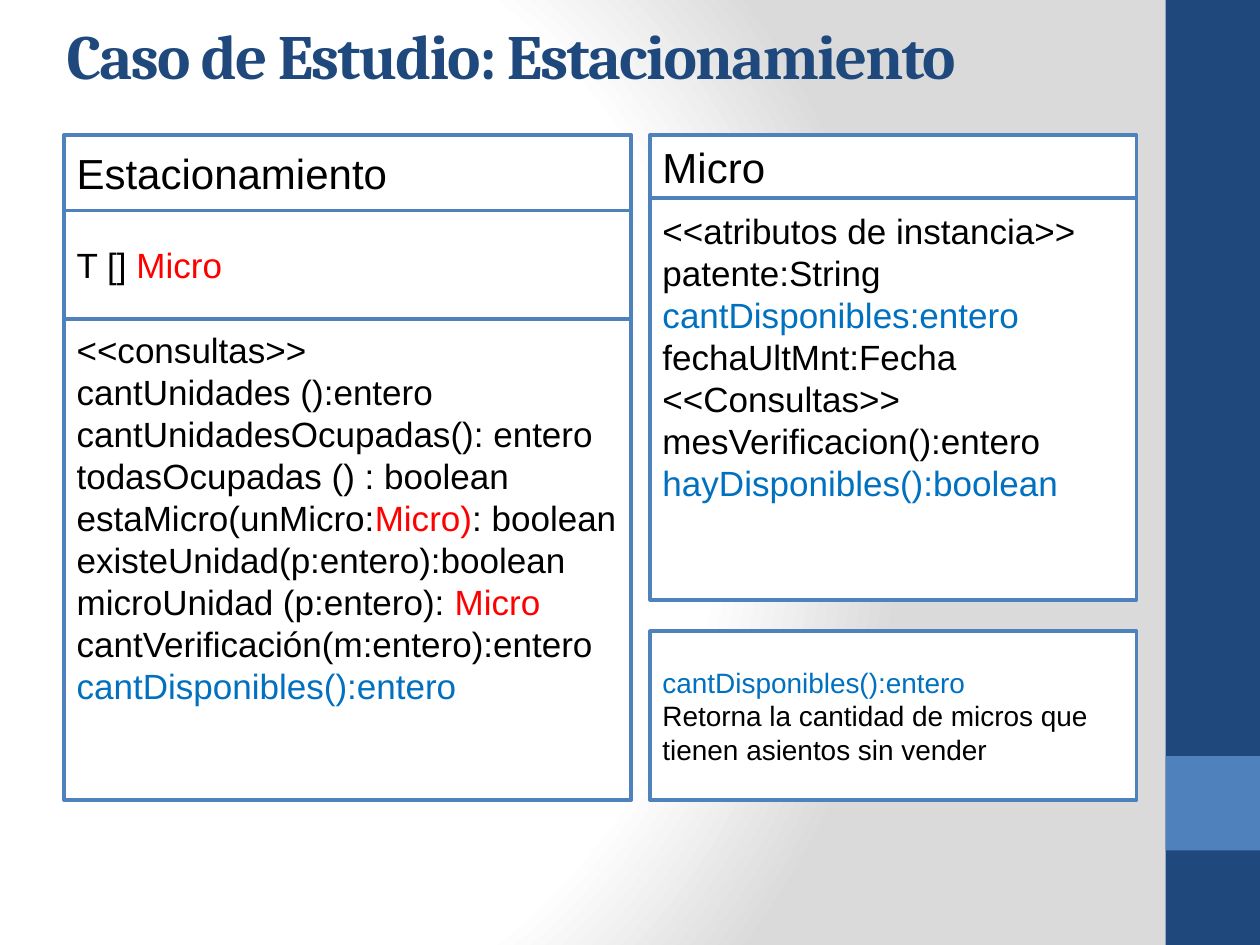
from lxml.etree import SubElement
from pptx import Presentation
from pptx.dml.color import RGBColor
from pptx.enum.shapes import MSO_SHAPE
from pptx.enum.text import MSO_ANCHOR, PP_ALIGN
from pptx.oxml.ns import qn
from pptx.util import Inches, Pt

NAVY, BLUE, WHITE, GRAY = "1F497D", "4F81BD", "FFFFFF", "DADADA"
BLACK, RED, SKY = "000000", "FF0000", "0070C0"

TITLE = "Caso de Estudio: Estacionamiento"
BACKGROUND_STOPS = [(0, WHITE), (75, WHITE), (100, GRAY)]
BACKGROUND_FOCUS = {"l": 20, "t": 50, "r": 100, "b": 50}
SIDEBAR = [(0, 7.5, NAVY), (6, 0.75, BLUE)]  # top, height, color

# A line is a list of (text, color) runs.
STATION_NAME = [[("Estacionamiento", BLACK)]]
STATION_ATTRIBUTES = [[("T [] ", BLACK), ("Micro", RED)]]
STATION_QUERIES = [
    [("<<consultas>>", BLACK)],
    [("cantUnidades ():entero", BLACK)],
    [("cantUnidadesOcupadas(): entero", BLACK)],
    [("todasOcupadas () : boolean", BLACK)],
    [("estaMicro(unMicro:", BLACK), ("Micro)", RED), (": boolean", BLACK)],
    [("existeUnidad(p:entero):boolean", BLACK)],
    [("microUnidad (p:entero): ", BLACK), ("Micro", RED)],
    [("cantVerificación(m:entero):entero", BLACK)],
    [("cantDisponibles():entero", SKY)],
]
BUS_NAME = [[("Micro", BLACK)]]
BUS_MEMBERS = [
    [("<<atributos de instancia>>", BLACK)],
    [("patente:String", BLACK)],
    [("cantDisponibles:entero", SKY)],
    [("fechaUltMnt:Fecha", BLACK)],
    [("<<Consultas>>", BLACK)],
    [("mesVerificacion():entero", BLACK)],
    [("hayDisponibles():boolean", SKY)],
]
NOTE = [
    [("cantDisponibles():entero", SKY)],
    [("Retorna la cantidad de micros que", BLACK)],
    [("tienen asientos sin vender", BLACK)],
]

# Stacks of boxes: left, top, width, wrap, [(height, size, bottom inset, lines)]
STACKS = [
    (0.51, 1.07, 4.5, False, [
        (0.6, 24, 0.05, STATION_NAME),
        (0.86, 20, 0.05, STATION_ATTRIBUTES),
        (3.82, 20, 0.72, STATION_QUERIES),
    ]),
    (5.16, 1.07, 3.86, True, [
        (0.5, 24, 0.05, BUS_NAME),
        (3.19, 20, 0.72, BUS_MEMBERS),
    ]),
    (5.16, 5.01, 3.86, False, [(1.34, 16, 0.05, NOTE)]),
]


def rgb(color):
    return RGBColor.from_string(color)


def paint_background(slide):
    """Fill the background with a circular gradient."""
    slide.background.fill.gradient()
    gradient = next(slide.element.iter(qn("a:gradFill")))
    for child in list(gradient):
        gradient.remove(child)
    stops = SubElement(gradient, qn("a:gsLst"))
    for position, color in BACKGROUND_STOPS:
        stop = SubElement(stops, qn("a:gs"), pos=str(position * 1000))
        SubElement(stop, qn("a:srgbClr"), val=color)
    circle = SubElement(gradient, qn("a:path"), path="circle")
    focus = {side: str(share * 1000) for side, share in BACKGROUND_FOCUS.items()}
    SubElement(circle, qn("a:fillToRect"), focus)


def add_rectangle(slide, left, top, width, height, fill, border=None):
    rectangle = slide.shapes.add_shape(
        MSO_SHAPE.RECTANGLE, Inches(left), Inches(top), Inches(width), Inches(height))
    rectangle.shadow.inherit = False
    rectangle.fill.solid()
    rectangle.fill.fore_color.rgb = rgb(fill)
    if border:
        rectangle.line.color.rgb = rgb(border)
        rectangle.line.width = Pt(2)
    else:
        rectangle.line.fill.background()
    return rectangle


def add_run(paragraph, text, font, size, color):
    run = paragraph.add_run()
    run.text = text
    run.font.name = font
    run.font.size = Pt(size)
    run.font.color.rgb = rgb(color)
    return run


def write_lines(frame, lines, size, bottom_inset, wrap):
    frame.word_wrap = wrap
    frame.vertical_anchor = MSO_ANCHOR.MIDDLE
    frame.margin_bottom = Inches(bottom_inset)
    for index, runs in enumerate(lines):
        paragraph = frame.add_paragraph() if index else frame.paragraphs[0]
        paragraph.alignment = PP_ALIGN.LEFT
        for text, color in runs:
            add_run(paragraph, text, "Arial", size, color)


def add_title(slide):
    title = slide.shapes.add_textbox(Inches(0.43), Inches(0.05), Inches(9.14), Inches(0.76))
    frame = title.text_frame
    frame.word_wrap = True
    frame.vertical_anchor = MSO_ANCHOR.MIDDLE
    run = add_run(frame.paragraphs[0], TITLE, "Cambria", 36, NAVY)
    run.font.bold = True
    run.font._element.set("spc", "-100")


def main():
    deck = Presentation()
    deck.slide_width, deck.slide_height = Inches(10), Inches(7.5)
    slide = deck.slides.add_slide(deck.slide_layouts[6])
    paint_background(slide)
    for top, height, color in SIDEBAR:
        add_rectangle(slide, 9.25, top, 0.75, height, color)
    for left, top, width, wrap, boxes in STACKS:
        for height, size, bottom_inset, lines in boxes:
            box = add_rectangle(slide, left, top, width, height, WHITE, BLUE)
            write_lines(box.text_frame, lines, size, bottom_inset, wrap)
            top += height
    add_title(slide)
    deck.save("out.pptx")


if __name__ == "__main__":
    main()
